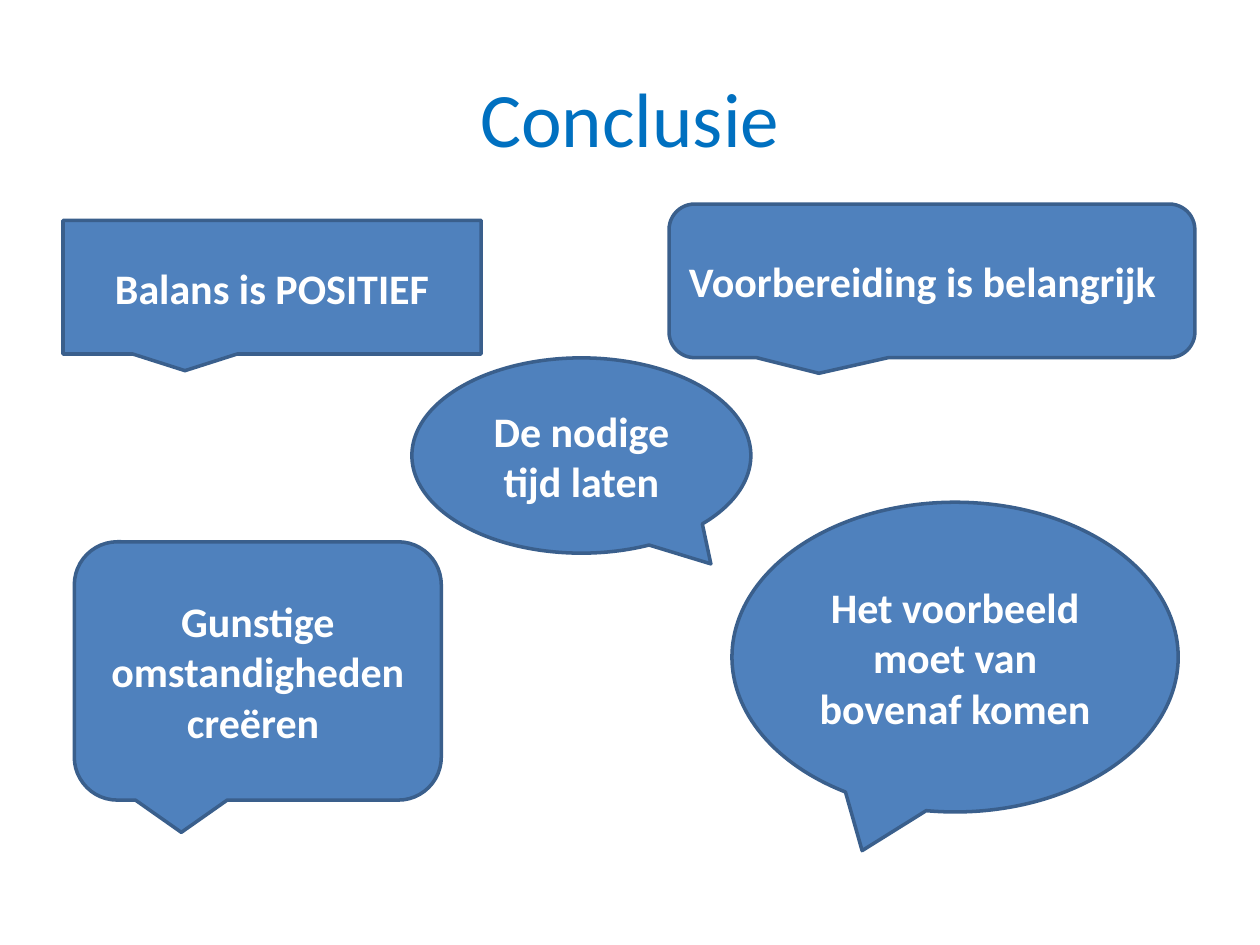
import pptx
import pptx.util
import pptx.dml.color
import pptx.enum.shapes
import pptx.enum.text

Pt = pptx.util.Pt
SHAPES = pptx.enum.shapes.MSO_SHAPE
ALIGN = pptx.enum.text.PP_ALIGN
COLOURS = {"title": "0070C0", "fill": "4F81BD", "line": "3A5F8C", "text": "FFFFFF"}


def colour(name):
    return pptx.dml.color.RGBColor.from_string(COLOURS[name])


def write_text(frame, text, *, size, ink, bold=False, align=ALIGN.CENTER):
    frame.word_wrap = True
    frame.vertical_anchor = pptx.enum.text.MSO_ANCHOR.MIDDLE
    para = frame.paragraphs[0]
    para.alignment = align
    span = para.add_run()
    span.text = text
    span.font.name = "Calibri"
    span.font.size = Pt(size)
    span.font.bold = bold
    span.font.color.rgb = colour(ink)


def add_title(page, box, text):
    title = page.shapes.add_textbox(*map(Pt, box))
    write_text(title.text_frame, text, size=44, ink="title")


def add_callout(page, box, kind, text, tail=(), align=ALIGN.CENTER):
    callout = page.shapes.add_shape(kind, *map(Pt, box))
    for index, value in enumerate(tail):
        callout.adjustments[index] = value
    callout.shadow.inherit = False
    callout.fill.solid()
    callout.fill.fore_color.rgb = colour("fill")
    callout.line.color.rgb = colour("line")
    callout.line.width = Pt(2)
    write_text(callout.text_frame, text, size=24, ink="text", bold=True, align=align)


def main():
    deck = pptx.Presentation()
    deck.slide_width, deck.slide_height = Pt(720), Pt(540)
    page = deck.slides.add_slide(deck.slide_layouts[6])
    add_title(page, (36, 21.6, 648, 90), "Conclusie")
    add_callout(page, (36, 126, 239, 76.3), SHAPES.RECTANGULAR_CALLOUT,
                "Balans is POSITIEF")
    add_callout(page, (382.3, 116.6, 300.5, 87.8), SHAPES.ROUNDED_RECTANGULAR_CALLOUT,
                "Voorbereiding is belangrijk", tail=(-0.215, 0.602), align=ALIGN.LEFT)
    add_callout(page, (235.4, 204.5, 193.7, 111.6), SHAPES.OVAL_CALLOUT,
                "De nodige tijd laten", tail=(0.382, 0.555))
    add_callout(page, (42.5, 309.6, 209.7, 147.6), SHAPES.ROUNDED_RECTANGULAR_CALLOUT,
                "Gunstige omstandigheden creëren ")
    add_callout(page, (418.3, 287, 255, 177), SHAPES.OVAL_CALLOUT,
                "Het voorbeeld moet van bovenaf komen")
    deck.save("out.pptx")


if __name__ == "__main__":
    main()
